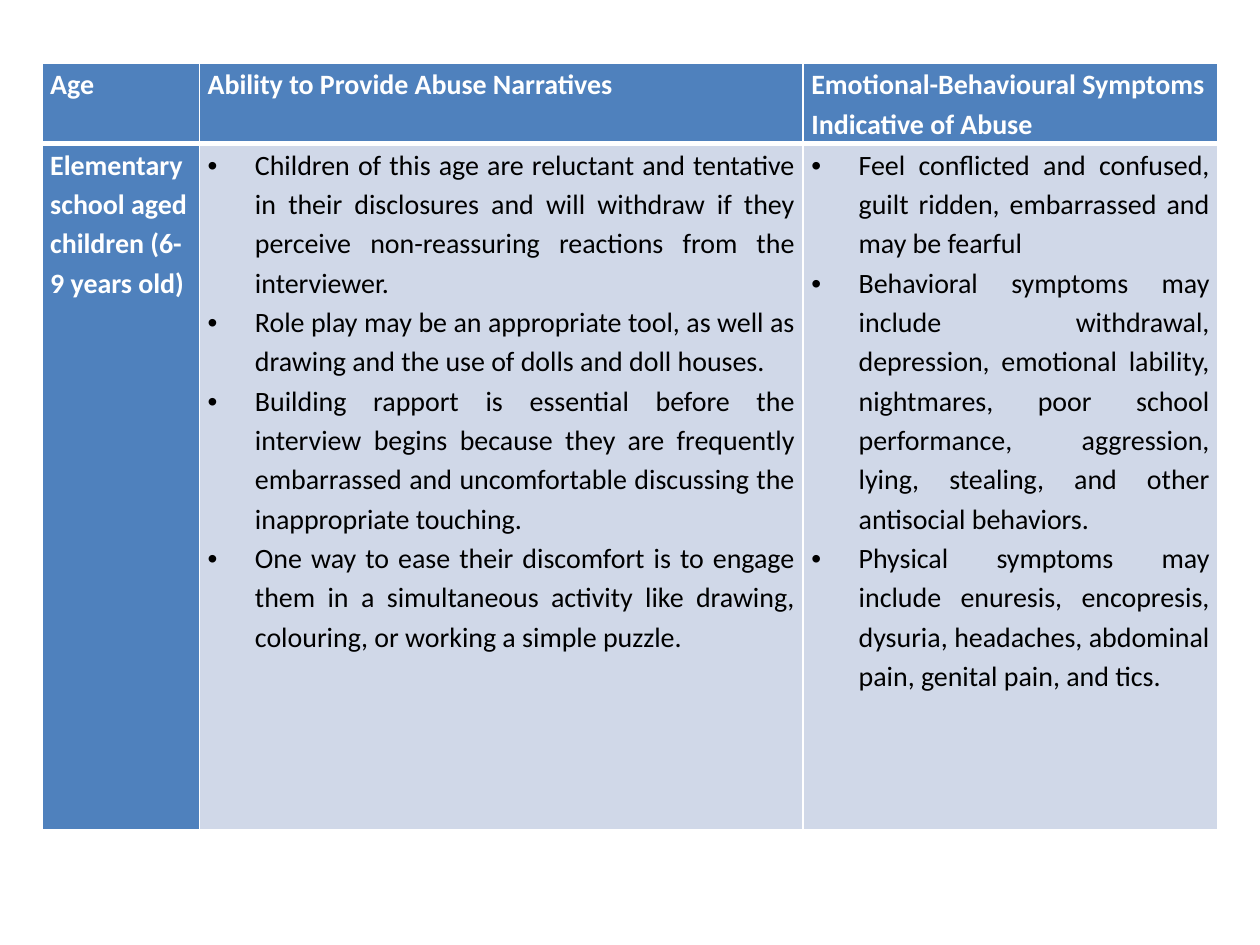
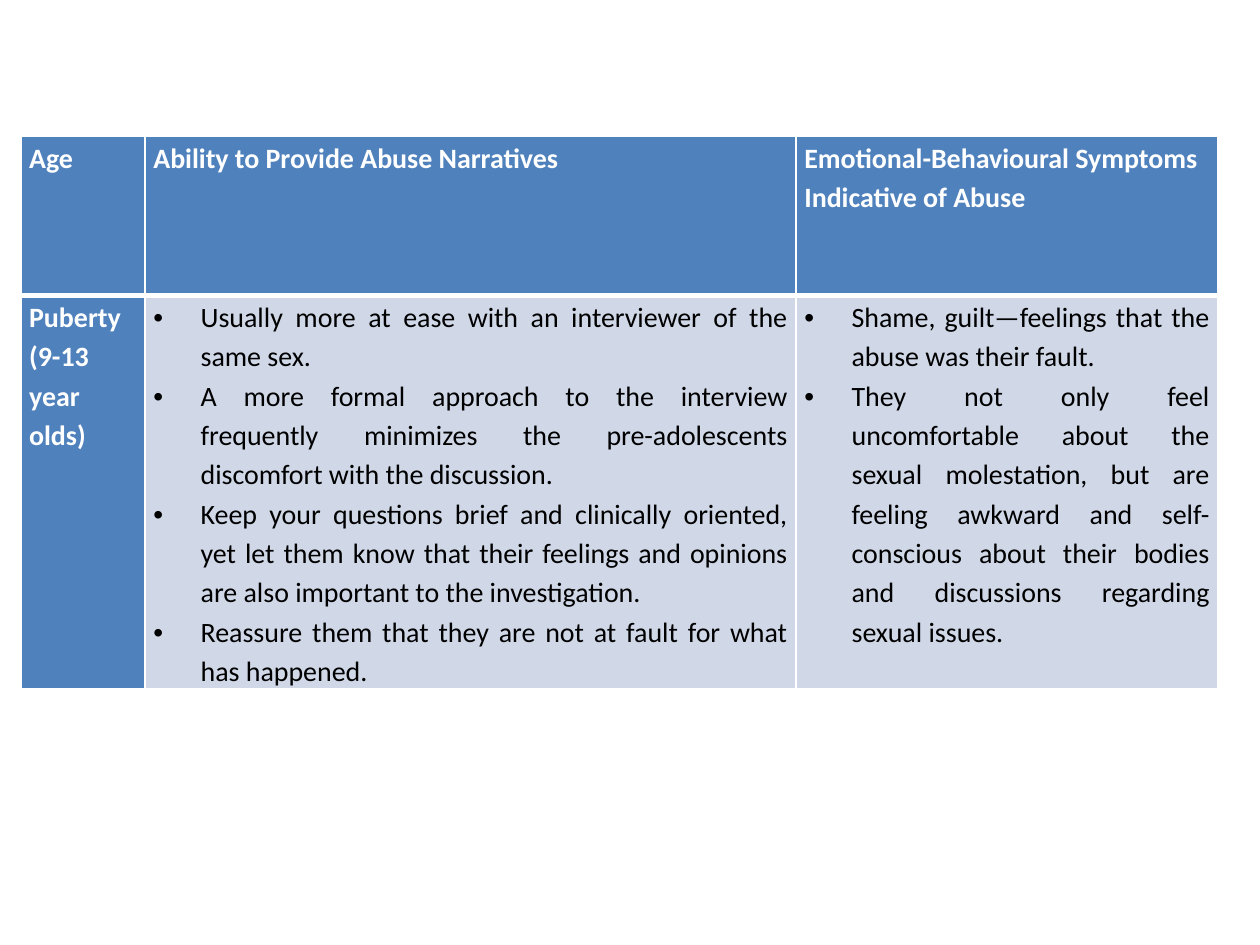
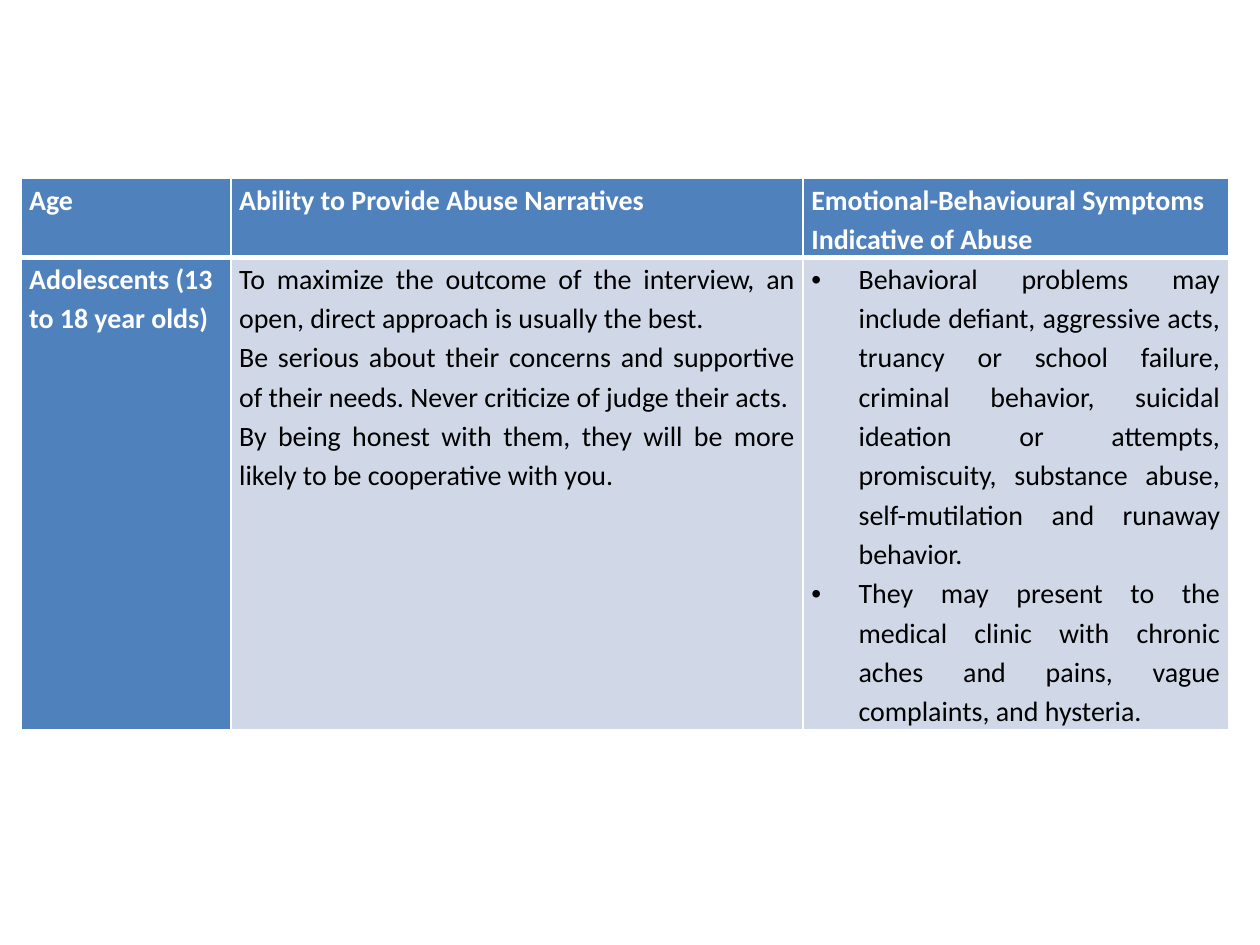
from lxml import etree
from pptx import Presentation
from pptx.dml.color import RGBColor
from pptx.enum.text import PP_ALIGN
from pptx.oxml.ns import qn
from pptx.util import Pt

JUSTIFY = PP_ALIGN.JUSTIFY
LEFT = PP_ALIGN.LEFT
WHITE = RGBColor(0xFF, 0xFF, 0xFF)
BLACK = RGBColor(0, 0, 0)
BLUE = RGBColor(0x4F, 0x81, 0xBD)
PALE = RGBColor(0xD0, 0xD8, 0xE8)
FONT = "Calibri"
SIZE = 16
SPACING = 1.15
PAD = 4.7
INDENT = 27
THIN, THICK = 1, 3
HEADS = [
    "Age",
    "Ability to Provide Abuse Narratives",
    "Emotional-Behavioural Symptoms Indicative of Abuse",
]

GROUPS = [
    {
        "box": (24, 36, 672, 438),
        "cols": (90, 345, 237),
        "head": 46,
        "age": "Elementary school aged children (6-9 years old)",
        "story": [
            "Children of this age are reluctant and tentative in their disclosures and will withdraw if they perceive non-reassuring reactions from the interviewer.",
            "Role play may be an appropriate tool, as well as drawing and the use of dolls and doll houses.",
            "Building rapport is essential before the interview begins because they are frequently embarrassed and uncomfortable discussing the inappropriate touching.",
            "One way to ease their discomfort is to engage them in a simultaneous activity like drawing, colouring, or working a simple puzzle.",
        ],
        "listed": True,
        "signs": [
            "Feel conflicted and confused, guilt ridden, embarrassed and may be fearful",
            "Behavioral symptoms may include withdrawal, depression, emotional lability, nightmares, poor school performance, aggression, lying, stealing, and other antisocial behaviors.",
            "Physical symptoms may include enuresis, encopresis, dysuria, headaches, abdominal pain, genital pain, and tics.",
        ],
    },
    {
        "box": (12, 78, 684, 315),
        "cols": (71, 372, 241),
        "head": 91,
        "age": "Puberty (9-13 year olds)",
        "story": [
            "Usually more at ease with an interviewer of the same sex.",
            "A more formal approach to the interview frequently minimizes the pre-adolescents discomfort with the discussion.",
            "Keep your questions brief and clinically oriented, yet let them know that their feelings and opinions are also important to the investigation.",
            "Reassure them that they are not at fault for what has happened.",
        ],
        "listed": True,
        "signs": [
            "Shame, guilt—feelings that the abuse was their fault.",
            "They not only feel uncomfortable about the sexual molestation, but are feeling awkward and self-conscious about their bodies and discussions regarding sexual issues.",
        ],
    },
    {
        "box": (12, 102, 690, 314),
        "cols": (120, 327, 243),
        "head": 44,
        "age": "Adolescents (13 to 18 year olds)",
        "story": [
            "To maximize the outcome of the interview, an open, direct approach is usually the best.",
            "Be serious about their concerns and supportive of their needs. Never criticize of judge their acts.",
            "By being honest with them, they will be more likely to be cooperative with you.",
        ],
        "listed": False,
        "signs": [
            "Behavioral problems may include defiant, aggressive acts, truancy or school failure, criminal behavior, suicidal ideation or attempts, promiscuity, substance abuse, self-mutilation and runaway behavior.",
            "They may present to the medical clinic with chronic aches and pains, vague complaints, and hysteria.",
        ],
    },
]


def add_bullet(para):
    props = para._p.get_or_add_pPr()
    props.set("marL", str(Pt(INDENT)))
    props.set("indent", str(-Pt(INDENT)))
    etree.SubElement(props, qn("a:buFont"), typeface="Arial")
    etree.SubElement(props, qn("a:buChar"), char="•")


def add_edges(cell, top, bottom):
    props = cell._tc.get_or_add_tcPr()
    widths = {"lnL": THIN, "lnR": THIN, "lnT": top, "lnB": bottom}
    for side, width in widths.items():
        line = etree.SubElement(props, qn("a:" + side), w=str(Pt(width)))
        fill = etree.SubElement(line, qn("a:solidFill"))
        etree.SubElement(fill, qn("a:srgbClr"), val=str(WHITE))


def fill_cell(cell, lines, strong, listed=False):
    cell.margin_left = cell.margin_right = Pt(PAD)
    cell.margin_top = cell.margin_bottom = 0
    cell.fill.solid()
    cell.fill.fore_color.rgb = BLUE if strong else PALE
    cell.text_frame.text = "\n".join(lines)
    for para in cell.text_frame.paragraphs:
        para.alignment = LEFT if strong else JUSTIFY
        para.line_spacing = SPACING
        if listed:
            add_bullet(para)
        for run in para.runs:
            run.font.name = FONT
            run.font.size = Pt(SIZE)
            run.font.bold = strong
            run.font.color.rgb = WHITE if strong else BLACK


def add_group(deck, group):
    slide = deck.slides.add_slide(deck.slide_layouts[6])
    box = group["box"]
    table = slide.shapes.add_table(2, 3, *map(Pt, box)).table
    for column, width in zip(table.columns, group["cols"]):
        column.width = Pt(width)
    head = group["head"]
    for row, height in zip(table.rows, (head, box[3] - head)):
        row.height = Pt(height)
    for index, text in enumerate(HEADS):
        add_edges(table.cell(0, index), THIN, THICK)
        add_edges(table.cell(1, index), THICK, THIN)
        fill_cell(table.cell(0, index), [text], True)
    fill_cell(table.cell(1, 0), [group["age"]], True)
    fill_cell(table.cell(1, 1), group["story"], False, group["listed"])
    fill_cell(table.cell(1, 2), group["signs"], False, True)


def main():
    deck = Presentation()
    deck.slide_width, deck.slide_height = Pt(720), Pt(540)
    for group in GROUPS:
        add_group(deck, group)
    deck.save("out.pptx")


if __name__ == "__main__":
    main()
